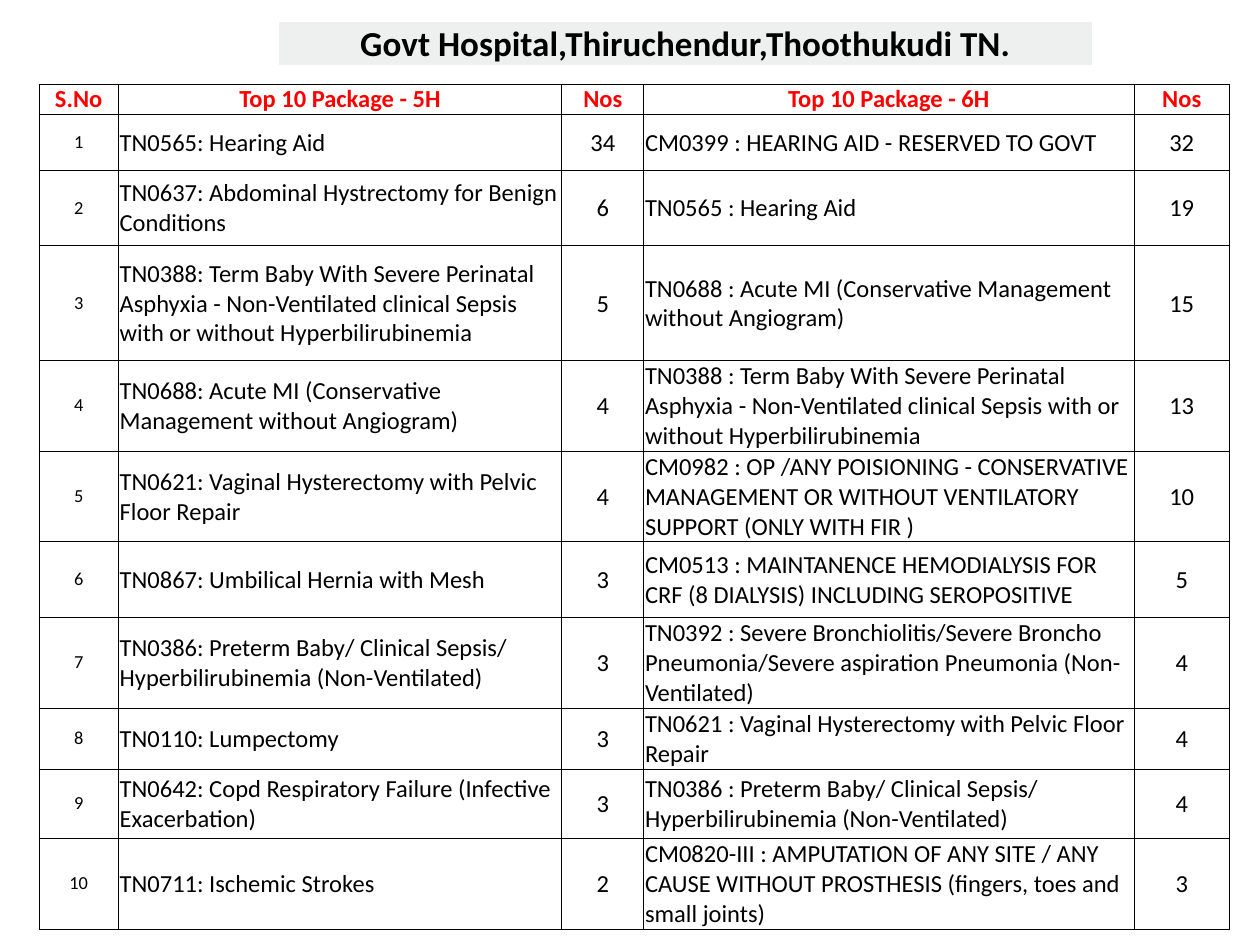
import pptx
import pptx.dml.color
import pptx.enum.text
import pptx.oxml
import pptx.oxml.ns
import pptx.util

RGBColor = pptx.dml.color.RGBColor
Inches = pptx.util.Inches
Pt = pptx.util.Pt
PP_ALIGN = pptx.enum.text.PP_ALIGN
MSO_ANCHOR = pptx.enum.text.MSO_ANCHOR

BLACK = RGBColor(0x00, 0x00, 0x00)
WHITE = RGBColor(0xFF, 0xFF, 0xFF)
RED = RGBColor(0xFF, 0x00, 0x00)
PALE_GREY = RGBColor(0xEE, 0xF0, 0xEF)

TITLE = "Govt Hospital,Thiruchendur,Thoothukudi TN."
HEADINGS = ("S.No", "Top 10 Package - 5H", "Nos", "Top 10 Package - 6H", "Nos")
PACKAGES = [
    ("TN0565: Hearing Aid", 34,
     "CM0399 : HEARING AID - RESERVED TO GOVT", 32),
    ("TN0637: Abdominal Hystrectomy for Benign Conditions", 6,
     "TN0565 : Hearing Aid", 19),
    ("TN0388: Term Baby With Severe Perinatal Asphyxia - Non-Ventilated "
     "clinical Sepsis with or without Hyperbilirubinemia", 5,
     "TN0688 : Acute MI (Conservative Management without Angiogram)", 15),
    ("TN0688: Acute MI (Conservative Management without Angiogram)", 4,
     "TN0388 : Term Baby With Severe Perinatal Asphyxia - Non-Ventilated "
     "clinical Sepsis with or without Hyperbilirubinemia", 13),
    ("TN0621: Vaginal Hysterectomy with Pelvic Floor Repair", 4,
     "CM0982 : OP /ANY POISIONING - CONSERVATIVE MANAGEMENT OR WITHOUT "
     "VENTILATORY SUPPORT (ONLY WITH FIR )", 10),
    ("TN0867: Umbilical Hernia with Mesh", 3,
     "CM0513 : MAINTANENCE HEMODIALYSIS FOR CRF (8 DIALYSIS) INCLUDING "
     "SEROPOSITIVE", 5),
    ("TN0386: Preterm Baby/ Clinical Sepsis/ Hyperbilirubinemia "
     "(Non-Ventilated)", 3,
     "TN0392 : Severe Bronchiolitis/Severe Broncho Pneumonia/Severe "
     "aspiration Pneumonia (Non-Ventilated)", 4),
    ("TN0110: Lumpectomy", 3,
     "TN0621 : Vaginal Hysterectomy with Pelvic Floor Repair", 4),
    ("TN0642: Copd Respiratory Failure (Infective Exacerbation)", 3,
     "TN0386 : Preterm Baby/ Clinical Sepsis/ Hyperbilirubinemia "
     "(Non-Ventilated)", 4),
    ("TN0711: Ischemic Strokes", 2,
     "CM0820-III : AMPUTATION OF ANY SITE / ANY CAUSE WITHOUT PROSTHESIS "
     "(fingers, toes and small joints)", 3),
]
COLUMN_WIDTHS = (0.63, 3.52, 0.65, 3.89, 0.76)
ROW_HEIGHTS = (0.24, 0.44, 0.6, 0.91, 0.71, 0.71, 0.6, 0.71, 0.48, 0.55, 0.71)

HEADING_FONT = {"size": Pt(14), "bold": True}
SERIAL_FONT = {"size": Pt(10.5), "bold": False}
BODY_FONT = {"size": Pt(14), "bold": False}
NO_INSET = dict.fromkeys(
    ("margin_left", "margin_right", "margin_top", "margin_bottom"), 0)
THIN_INSET = {**NO_INSET, **dict.fromkeys(
    ("margin_left", "margin_right", "margin_top"), Inches(0.01))}


def set_all(target, values):
    for attribute, value in values.items():
        setattr(target, attribute, value)


def set_borders(cell, color, width):
    properties = cell._tc.get_or_add_tcPr()
    namespace = pptx.oxml.ns.nsdecls("a")
    for position, side in enumerate(("lnL", "lnR", "lnT", "lnB")):
        properties.insert(position, pptx.oxml.parse_xml(
            f'<a:{side} {namespace} w="{Pt(width)}"><a:solidFill>'
            f'<a:srgbClr val="{color}"/></a:solidFill></a:{side}>'))


def fill_cell(cell, text, font, color=BLACK, align=PP_ALIGN.CENTER,
              inset=THIN_INSET, anchor=MSO_ANCHOR.MIDDLE, fill=WHITE,
              border=(BLACK, 0.5)):
    cell.text = str(text)
    set_all(cell, {**inset, "vertical_anchor": anchor})
    cell.fill.solid()
    cell.fill.fore_color.rgb = fill
    paragraph = cell.text_frame.paragraphs[0]
    paragraph.alignment = align
    run_font = paragraph.runs[0].font
    set_all(run_font, {"name": "Calibri", **font})
    run_font.color.rgb = color
    set_borders(cell, *border)


def add_plain_table(slide, left, top, widths, heights):
    """Add a table without style bands, sized by its columns and rows."""
    table = slide.shapes.add_table(
        len(heights), len(widths), Inches(left), Inches(top),
        Inches(sum(widths)), Inches(sum(heights))).table
    set_all(table, {"first_row": False, "horz_banding": False})
    for column, width in zip(table.columns, widths):
        column.width = Inches(width)
    for row, height in zip(table.rows, heights):
        row.height = Inches(height)
    return table


def add_title(slide, left, top, width, height):
    banner = add_plain_table(slide, left, top, [width], [height])
    fill_cell(banner.cell(0, 0), TITLE, {"size": Pt(20), "bold": True},
              anchor=MSO_ANCHOR.BOTTOM, fill=PALE_GREY, border=(WHITE, 1))


def add_package_table(slide, left, top):
    table = add_plain_table(slide, left, top, COLUMN_WIDTHS, ROW_HEIGHTS)
    for column, heading in enumerate(HEADINGS):
        fill_cell(table.cell(0, column), heading, HEADING_FONT, RED,
                  inset=NO_INSET)
    for serial, package in enumerate(PACKAGES, start=1):
        fill_cell(table.cell(serial, 0), serial, SERIAL_FONT, inset=NO_INSET)
        for column, value in enumerate(package, start=1):
            align = PP_ALIGN.LEFT if isinstance(value, str) else PP_ALIGN.CENTER
            fill_cell(table.cell(serial, column), value, BODY_FONT, align=align)


def main():
    presentation = pptx.Presentation()
    set_all(presentation, {"slide_width": Inches(10),
                           "slide_height": Inches(7.5)})
    slide = presentation.slides.add_slide(presentation.slide_layouts[6])
    add_title(slide, 2.21, 0.17, 6.46, 0.34)
    add_package_table(slide, 0.31, 0.67)
    presentation.save("out.pptx")


if __name__ == "__main__":
    main()
